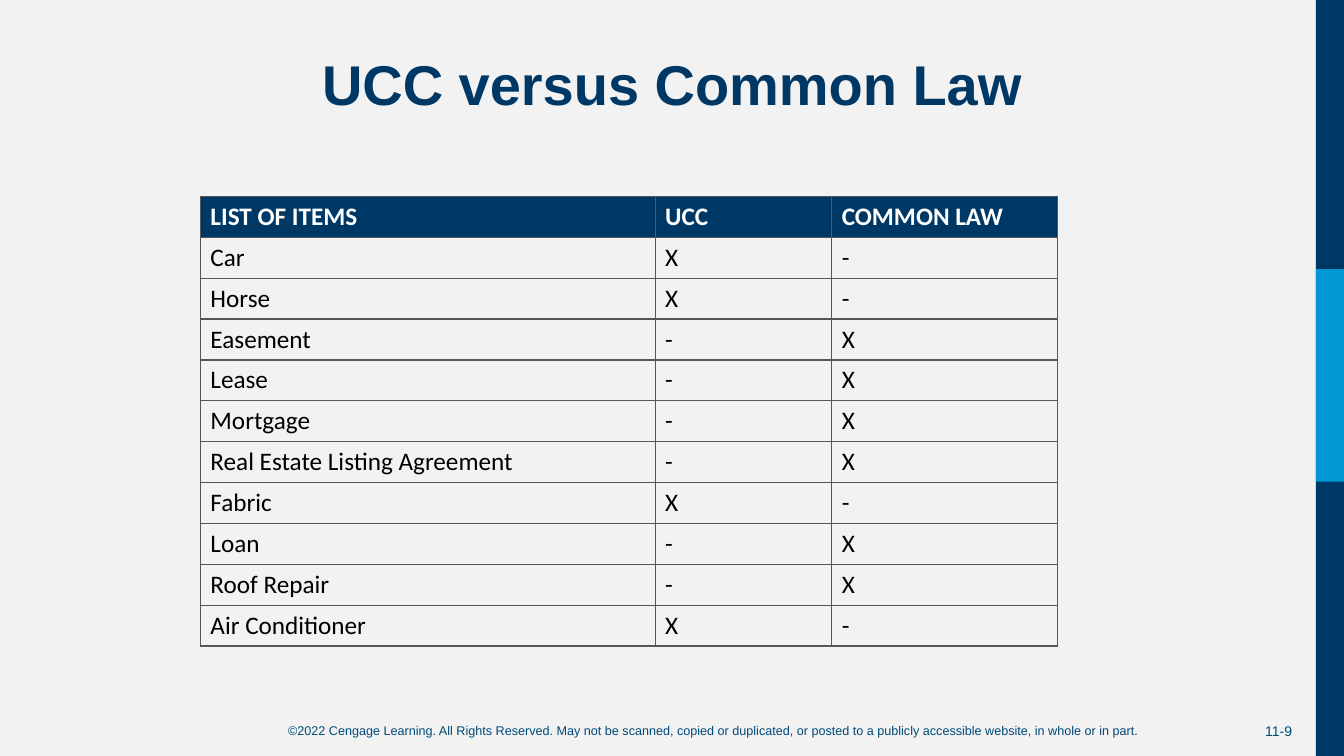
from lxml.etree import SubElement
from pptx import Presentation
from pptx.dml.color import RGBColor
from pptx.enum.shapes import MSO_SHAPE
from pptx.enum.text import MSO_ANCHOR, PP_ALIGN
from pptx.oxml.ns import qn
from pptx.util import Cm, Pt

COLORS = {
    "background": "F2F2F2",
    "navy": "003865",
    "sky": "0098D4",
    "footer": "004A78",
    "border": "53565A",
    "white": "FFFFFF",
    "black": "000000",
}
HEADINGS = ("LIST OF ITEMS", "UCC", "COMMON LAW")
ITEMS = (
    ("Car", True),
    ("Horse", True),
    ("Easement", False),
    ("Lease", False),
    ("Mortgage", False),
    ("Real Estate Listing Agreement", False),
    ("Fabric", True),
    ("Loan", False),
    ("Roof Repair", False),
    ("Air Conditioner", True),
)
COPYRIGHT = (
    "©2022 Cengage Learning. All Rights Reserved. May not be scanned, copied or "
    "duplicated, or posted to a publicly accessible website, in whole or in part."
)


class SlideBuilder:
    """Hold the style and current slide, and add each kind of element."""

    def __init__(self, page):
        self.page = page
        page.background.fill.solid()
        page.background.fill.fore_color.rgb = self.color("background")

    def color(self, name):
        return RGBColor.from_string(COLORS[name])

    def style(self, paragraph, size, color, font="Arial", bold=False):
        paragraph.font.name = font
        paragraph.font.size = Pt(size)
        paragraph.font.bold = bold
        paragraph.font.color.rgb = self.color(color)

    def title(self, text, left, top, width, height):
        box = self.page.shapes.title
        box.left, box.top, box.width, box.height = map(Cm, (left, top, width, height))
        box.text_frame.text = text
        box.text_frame.vertical_anchor = MSO_ANCHOR.TOP
        para = box.text_frame.paragraphs[0]
        para.alignment = PP_ALIGN.CENTER
        para.line_spacing = 0.9
        self.style(para, 40, "navy", bold=True)

    def bar(self, color, left, top, width, height):
        bar = self.page.shapes.add_shape(
            MSO_SHAPE.RECTANGLE, *map(Cm, (left, top, width, height))
        )
        bar.shadow.inherit = False
        bar.fill.solid()
        bar.fill.fore_color.rgb = self.color(color)
        bar.line.fill.background()

    def text(self, text, size, align, anchor, left, top, width, height):
        box = self.page.shapes.add_textbox(*map(Cm, (left, top, width, height)))
        frame = box.text_frame
        frame.word_wrap = True
        frame.vertical_anchor = anchor
        frame.text = text
        para = frame.paragraphs[0]
        para.alignment = align
        self.style(para, size, "footer")

    def borders(self, cell):
        properties = cell._tc.get_or_add_tcPr()
        for side in ("lnL", "lnR", "lnT", "lnB"):
            line = SubElement(properties, qn(f"a:{side}"), w=str(Pt(1)))
            fill = SubElement(line, qn("a:solidFill"))
            SubElement(fill, qn("a:srgbClr"), val=COLORS["border"])

    def table(self, rows, left, top, widths, row_height):
        table = self.page.shapes.add_table(
            len(rows), len(widths), Cm(left), Cm(top),
            Cm(sum(widths)), Cm(row_height * len(rows)),
        ).table
        table.horz_banding = False
        for column, width in zip(table.columns, widths):
            column.width = Cm(width)
        for row_index, values in enumerate(rows):
            table.rows[row_index].height = Cm(row_height)
            header = row_index == 0
            for column_index, value in enumerate(values):
                cell = table.cell(row_index, column_index)
                cell.text = value
                self.borders(cell)
                if header:
                    cell.fill.solid()
                    cell.fill.fore_color.rgb = self.color("navy")
                else:
                    cell.fill.background()
                self.style(
                    cell.text_frame.paragraphs[0], 18,
                    "white" if header else "black", "Calibri", header,
                )


def main():
    deck = Presentation()
    deck.slide_width, deck.slide_height = Cm(33.87), Cm(19.05)
    slide = SlideBuilder(deck.slides.add_slide(deck.slide_layouts[5]))
    slide.text(COPYRIGHT, 9, PP_ALIGN.CENTER, MSO_ANCHOR.TOP, 4.62, 18.08, 26.7, 0.64)
    slide.bar("navy", 33.16, 0, 0.71, 19.05)
    slide.bar("sky", 33.16, 6.78, 0.71, 5.36)
    slide.text("11-9", 10, PP_ALIGN.RIGHT, MSO_ANCHOR.MIDDLE, 30.78, 17.91, 2.03, 1.02)
    slide.title("UCC versus Common Law", 1.32, 1.32, 31.22, 3.38)
    marks = {True: ("X", "-"), False: ("-", "X")}
    rows = [HEADINGS] + [(item, *marks[under_ucc]) for item, under_ucc in ITEMS]
    slide.table(rows, 5.05, 4.95, (11.46, 4.45, 5.69), 1.03)
    deck.save("out.pptx")


if __name__ == "__main__":
    main()
